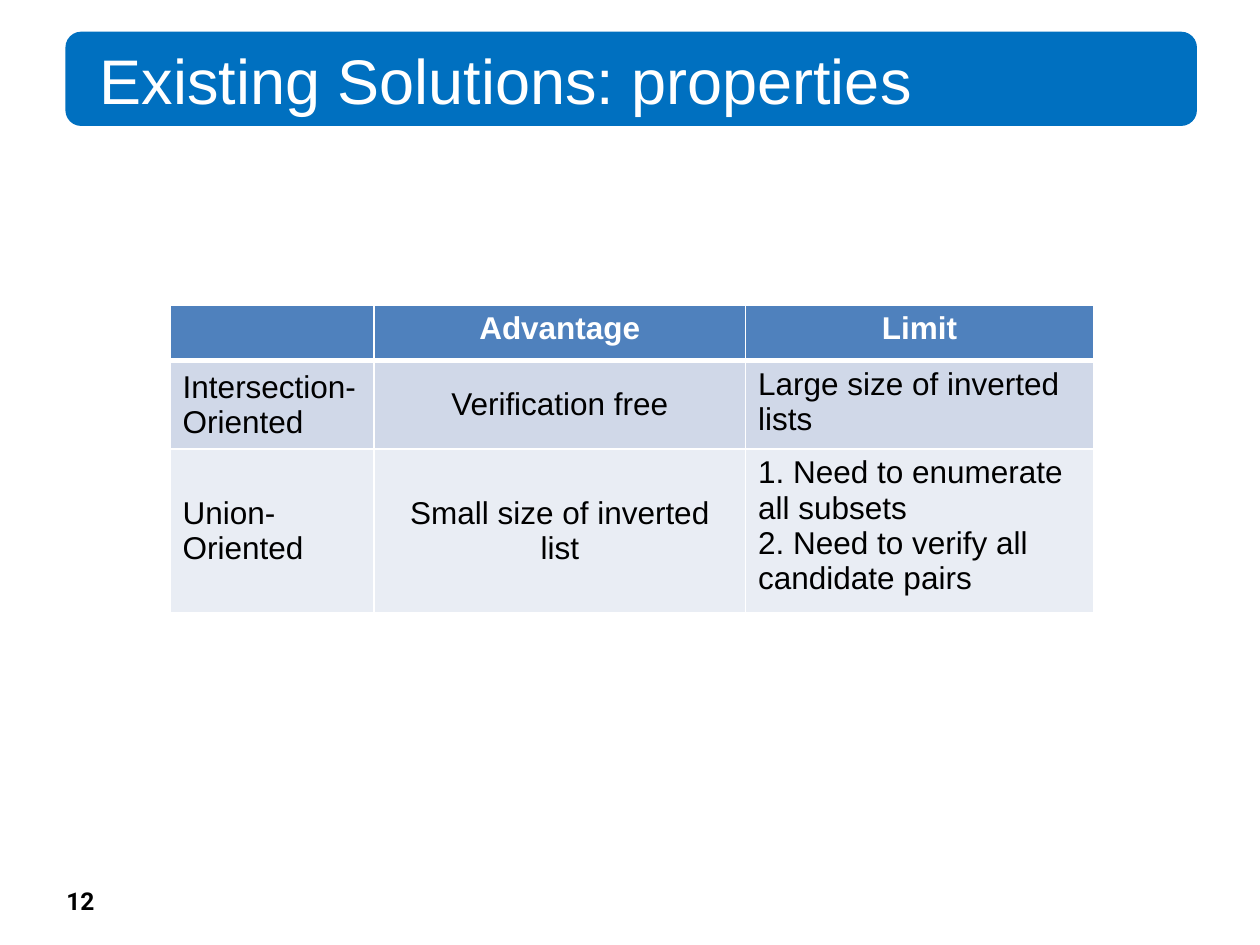
from lxml import etree
from pptx import Presentation
from pptx.dml.color import RGBColor
from pptx.enum.shapes import MSO_SHAPE as Shape
from pptx.enum.text import MSO_ANCHOR as Anchor, PP_ALIGN as Align
from pptx.oxml.ns import qn
from pptx.util import Cm, Pt

COLUMNS = (4.11, 7.49, 7.01)
ROWS = (1.12, 1.77, 3.3)
ROW_FILLS = ("4F81BD", "D0D8E8", "E9EDF4")
CONTENT = (
    ("", "Advantage", "Limit"),
    ("Intersection-Oriented", "Verification free", "Large size of inverted lists"),
    ("Union-Oriented", "Small size of inverted list",
     "1. Need to enumerate all subsets\n2. Need to verify all candidate pairs"),
)


def color(value):
    """Turn a hex string into a colour."""
    return RGBColor.from_string(value)


def paint(target, value):
    """Give a shape or cell a solid fill."""
    target.fill.solid()
    target.fill.fore_color.rgb = color(value)


def write(frame, text, size=18, font="Arial", fill="000000", bold=False, align=Align.LEFT):
    """Write text into a frame, one paragraph a line."""
    for index, line in enumerate(text.split("\n")):
        para = frame.add_paragraph() if index else frame.paragraphs[0]
        para.alignment = align
        para.font.size = Pt(size)
        if line:
            span = para.add_run()
            span.text = line
            span.font.size, span.font.name, span.font.bold = Pt(size), font, bold
            span.font.color.rgb = color(fill)


def add_borders(cell, bottom):
    """Draw white lines around a cell."""
    properties = cell._tc.get_or_add_tcPr()
    widths = {"a:lnL": 1, "a:lnR": 1, "a:lnT": 1, "a:lnB": bottom}
    for index, (tag, width) in enumerate(widths.items()):
        line = etree.Element(qn(tag), w=str(Pt(width)))
        fill = etree.SubElement(line, qn("a:solidFill"))
        etree.SubElement(fill, qn("a:srgbClr"), val="FFFFFF")
        properties.insert(index, line)


def add_title(page, text):
    """Add the rounded title bar."""
    bar = page.shapes.add_shape(Shape.ROUNDED_RECTANGLE, Cm(1.32), Cm(0.64), Cm(22.81), Cm(1.9))
    bar.shadow.inherit = False
    paint(bar, "0070C0")
    bar.line.fill.background()
    frame = bar.text_frame
    frame.word_wrap = True
    frame.vertical_anchor = Anchor.MIDDLE
    frame.margin_left = Cm(0.6)
    write(frame, text, size=36, fill="FFFFFF")


def add_page_number(page, text):
    """Add the page number at the bottom left."""
    box = page.shapes.add_textbox(Cm(1.09), Cm(17.73), Cm(1.19), Cm(0.86))
    box.text_frame.word_wrap = True
    write(box.text_frame, text, size=14, font="Roboto", bold=True)


def add_properties_table(page):
    """Add the table that compares the solutions."""
    table = page.shapes.add_table(len(ROWS), len(COLUMNS), Cm(3.43), Cm(6.15),
                                  Cm(sum(COLUMNS)), Cm(sum(ROWS))).table
    for column, width in zip(table.columns, COLUMNS):
        column.width = Cm(width)
    for row, height in zip(table.rows, ROWS):
        row.height = Cm(height)
    for r, texts in enumerate(CONTENT):
        header = r == 0
        for c, text in enumerate(texts):
            cell = table.cell(r, c)
            paint(cell, ROW_FILLS[r])
            add_borders(cell, 3 if header else 1)
            if not header and c < 2:
                cell.vertical_anchor = Anchor.MIDDLE
            write(cell.text_frame, text, bold=header, fill="FFFFFF" if header else "000000",
                  align=Align.CENTER if header or c == 1 else Align.LEFT)


def main():
    """Build and save the deck."""
    deck = Presentation()
    deck.slide_width, deck.slide_height = Cm(25.4), Cm(19.05)
    page = deck.slides.add_slide(deck.slide_layouts[6])
    add_page_number(page, "12")
    add_title(page, "Existing Solutions: properties")
    add_properties_table(page)
    deck.save("out.pptx")


if __name__ == "__main__":
    main()
